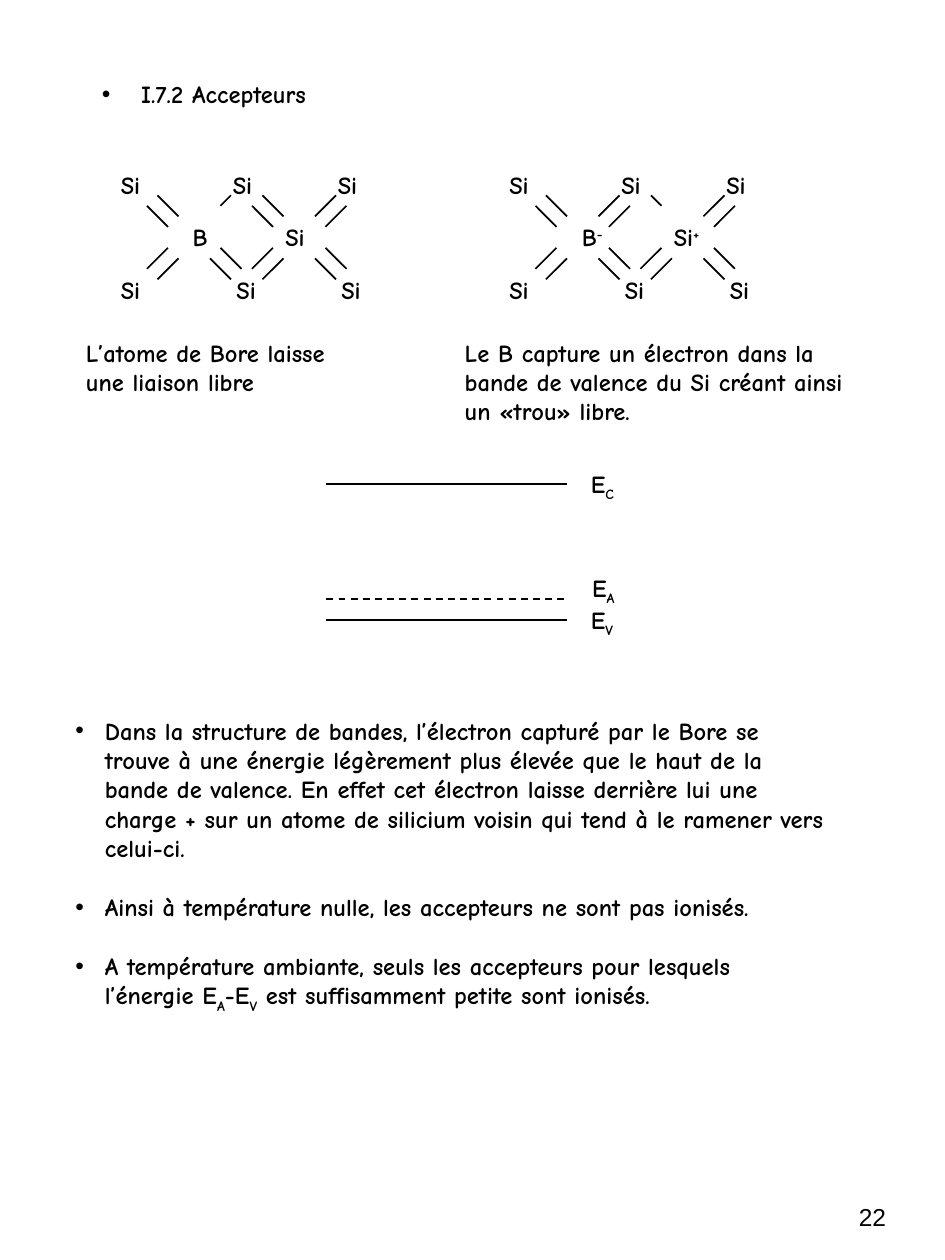
from dataclasses import dataclass
from typing import NamedTuple

from lxml.etree import SubElement
from pptx import Presentation
from pptx.dml.color import RGBColor
from pptx.enum.dml import MSO_LINE
from pptx.enum.shapes import MSO_CONNECTOR
from pptx.enum.text import MSO_ANCHOR, MSO_AUTO_SIZE, PP_ALIGN
from pptx.oxml.ns import qn
from pptx.util import Pt

COLORS = {"ink": "000000", "page": "FFFFFF"}
BODY_FONT, NUMBER_FONT = "Comic Neue", "Arial"
SIZE = 14
SUP, SUB = 30, -25
STEP = 6  # lattice unit of the bond strokes


class Piece(NamedTuple):
    text: str
    base: int = 0


class Bond(NamedTuple):
    """Stroke in lattice units from the corner of a cell."""
    x1: int
    y1: int
    x2: int
    y2: int


@dataclass
class Atom:
    symbol: str
    dx: float
    dy: float
    width: float
    charge: str = ""


@dataclass
class Lattice:
    left: float
    centers: list[Atom]
    cells: list[dict[str, list[Bond]]]


@dataclass
class Level:
    name: str
    line_y: float
    label_x: float
    label_y: float
    dashed: bool = False


# Four double bonds around a central atom
FULL = {
    "nw": [Bond(1, 0, 3, 2), Bond(0, 1, 2, 3)],
    "ne": [Bond(8, 0, 6, 2), Bond(9, 1, 7, 3)],
    "sw": [Bond(2, 5, 0, 7), Bond(3, 6, 1, 8)],
    "se": [Bond(7, 5, 9, 7), Bond(6, 6, 8, 8)],
}
OPEN_NE = FULL | {"ne": [Bond(8, 0, 7, 1)]}
OPEN_NW = FULL | {"nw": [Bond(1, 0, 2, 1)]}
CELL_GAP, LATTICE_TOP = 60, 111.6

OUTER_ATOMS = [Atom("Si", dx, dy, 28) for dy, xs in
               ((-18, (-22, 42, 102)), (42, (-22, 44, 104))) for dx in xs]
LATTICES = [
    Lattice(84, [Atom("B", 19, 12, 23), Atom("Si", 72, 12, 28)], [OPEN_NE, FULL]),
    Lattice(306, [Atom("B", 19.4, 12, 28.8, "-"), Atom("Si", 72, 12, 33, "+")],
            [FULL, OPEN_NW]),
]
LEVELS = [
    Level("C", 276.5, 330.5, 264.2),
    Level("V", 354.2, 330.5, 342),
    Level("A", 342.2, 331.2, 324),
]
CAPTIONS = [
    (42, 174, 41, "L’atome de Bore laisse une liaison libre"),
    (258.5, 244, 58, "Le B capture un électron dans la bande de valence du Si "
                     "créant ainsi un «trou» libre."),
]
BULLETS = [
    [Piece("Dans la structure de bandes, l’électron capturé par le Bore se trouve à une "
           "énergie légèrement plus élevée que le haut de la bande de valence. En effet "
           "cet électron laisse derrière lui une charge + sur un atome de silicium voisin "
           "qui tend à le ramener vers celui-ci.")],
    [Piece("Ainsi à température nulle, les accepteurs ne sont pas ionisés.")],
    [Piece("A température ambiante, seuls les accepteurs pour lesquels l’énergie E"),
     Piece("A", SUB), Piece("-E"), Piece("V", SUB),
     Piece(" est suffisamment petite sont ionisés.")],
]


def write(p, pieces: list[Piece], font: str = BODY_FONT, bold: bool = True) -> None:
    p.text = pieces[0].text
    for piece in pieces[1:]:
        p.add_run().text = piece.text
    for r, piece in zip(p.runs, pieces):
        r.font.name, r.font.size, r.font.bold = font, Pt(SIZE), bold
        r.font.color.rgb = RGBColor.from_string(COLORS["ink"])
        if piece.base:
            r.font._element.set("baseline", str(piece.base * 1000))


def add_bullet(p, margin: float, hang: float) -> None:
    pPr = p._p.get_or_add_pPr()
    pPr.set("marL", str(Pt(margin)))
    pPr.set("indent", str(-Pt(hang)))
    SubElement(pPr, qn("a:buFont")).set("typeface", "Arial")
    SubElement(pPr, qn("a:buChar")).set("char", "•")


def add_text(shapes, x: float, y: float, w: float, h: float, wrap: bool = True):
    tf = shapes.add_textbox(Pt(x), Pt(y), Pt(w), Pt(h)).text_frame
    tf.word_wrap = wrap
    return tf


def add_label(shapes, x: float, y: float, w: float, pieces: list[Piece]) -> None:
    write(add_text(shapes, x, y, w, 24, wrap=False).paragraphs[0], pieces)


def add_line(shapes, x1: float, y1: float, x2: float, y2: float, dashed: bool = False) -> None:
    c = shapes.add_connector(MSO_CONNECTOR.STRAIGHT, Pt(x1), Pt(y1), Pt(x2), Pt(y2))
    c.line.color.rgb = RGBColor.from_string(COLORS["ink"])
    c.line.width = Pt(1)
    if dashed:
        c.line.dash_style = MSO_LINE.DASH
    SubElement(c._element.spPr, qn("a:effectLst"))


def add_lattice(s, lattice: Lattice) -> None:
    shapes = s.shapes.add_group_shape().shapes
    for atom in OUTER_ATOMS + lattice.centers:
        pieces = [Piece(atom.symbol)]
        if atom.charge:
            pieces.append(Piece(atom.charge, SUP))
        add_label(shapes, lattice.left + atom.dx, LATTICE_TOP + atom.dy, atom.width, pieces)
    for i, cell in enumerate(lattice.cells):
        x = lattice.left + i * CELL_GAP
        for bonds in cell.values():
            for b in bonds:
                add_line(shapes, x + b.x1 * STEP, LATTICE_TOP + b.y1 * STEP,
                         x + b.x2 * STEP, LATTICE_TOP + b.y2 * STEP)


def main() -> None:
    prs = Presentation()
    prs.slide_width, prs.slide_height = Pt(540), Pt(720)
    s = prs.slides.add_slide(prs.slide_layouts[5])
    s.background.fill.solid()
    s.background.fill.fore_color.rgb = RGBColor.from_string(COLORS["page"])

    # Heading
    title = s.shapes.title
    title.left, title.top, title.width, title.height = Pt(36), Pt(41.8), Pt(438), Pt(49.7)
    tf = title.text_frame
    tf.auto_size, tf.vertical_anchor = MSO_AUTO_SIZE.NONE, MSO_ANCHOR.TOP
    p = tf.paragraphs[0]
    p.alignment = PP_ALIGN.LEFT
    write(p, [Piece("I.7.2 Accepteurs")])
    add_bullet(p, 37.5, 22.5)

    # Crystal lattices with captions
    for lattice in LATTICES:
        add_lattice(s, lattice)
    for x, w, h, text in CAPTIONS:
        write(add_text(s.shapes, x, 189.4, w, h).paragraphs[0], [Piece(text)])

    # Energy levels
    shapes = s.shapes.add_group_shape().shapes
    for level in LEVELS:
        add_line(shapes, 186.5, level.line_y, 324, level.line_y, level.dashed or level.name == "A")
        add_label(shapes, level.label_x, level.label_y, 29, [Piece("E"), Piece(level.name, SUB)])

    # Explanations
    tf = add_text(s.shapes, 36, 405.4, 444.2, 177)
    for i, pieces in enumerate(BULLETS):
        p = tf.add_paragraph() if i else tf.paragraphs[0]
        write(p, pieces)
        p.space_before = Pt(16.8 if i else 0)
        add_bullet(p, 16.8, 16.8)

    # Page number
    p = add_text(s.shapes, 387.4, 683.3, 126, 22.3).paragraphs[0]
    p.alignment = PP_ALIGN.RIGHT
    write(p, [Piece("22")], NUMBER_FONT, bold=False)

    prs.save("out.pptx")


if __name__ == "__main__":
    main()
